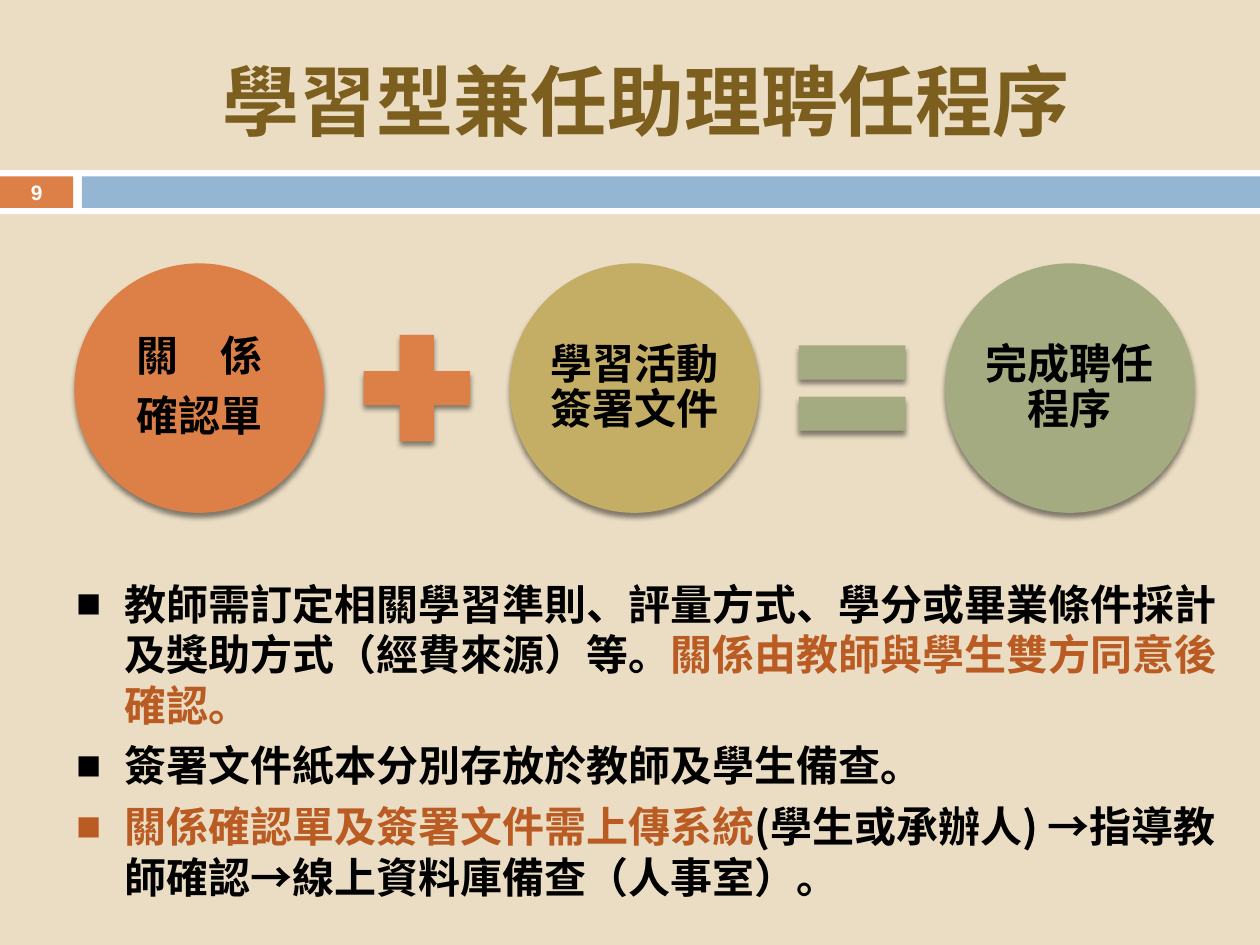
from dataclasses import dataclass

from lxml import etree
from pptx import Presentation
from pptx.dml.color import RGBColor
from pptx.enum import shapes, text
from pptx.oxml import ns
from pptx.util import Inches, Pt


@dataclass(frozen=True)
class Theme:
    background: str = "EBDDC3"
    white: str = "FFFFFF"
    black: str = "000000"
    orange: str = "DD8047"
    blue: str = "94B6D2"
    gold: str = "C4AD64"
    green: str = "A5AB81"
    title: str = "7C5F1E"
    accent: str = "B95B22"
    title_size: float = 44
    body_size: float = 24
    number_size: float = 11.9
    cjk: str = "Noto Sans CJK SC"
    circle_font: str = "Cabin"
    number_font: str = "Arial"


THEME = Theme()
SHAPE = shapes.MSO_SHAPE


def add_xml(parent, tag, **attrs):
    el = etree.SubElement(parent, ns.qn(tag))
    for name, value in attrs.items():
        el.set(name, str(value))
    return el


def add_run(p, content, size=THEME.body_size, color=THEME.black, font=THEME.cjk):
    r = p.add_run()
    r.text = content
    r.font.size = Pt(size)
    r.font.bold = True
    r.font.name = font
    r.font.color.rgb = RGBColor.from_string(color)
    add_xml(r._r.get_or_add_rPr(), "a:ea", typeface=THEME.cjk)


def add_shape(s, kind, box, color, shadow=False):
    sp = s.shapes.add_shape(kind, *map(Inches, box))
    sp.fill.solid()
    sp.fill.fore_color.rgb = RGBColor.from_string(color)
    sp.line.fill.background()
    sp.shadow.inherit = False
    if shadow:
        effects = sp._element.spPr.find(ns.qn("a:effectLst"))
        outer = add_xml(effects, "a:outerShdw", blurRad=Pt(3), dist=Pt(2.4),
                        dir=5400000, rotWithShape=0)
        add_xml(add_xml(outer, "a:srgbClr", val=THEME.black), "a:alpha", val=45000)
    return sp


def add_centred(sp, lines, spacing=None, after=0, **style):
    tf = sp.text_frame
    tf.word_wrap = True
    tf.vertical_anchor = text.MSO_ANCHOR.MIDDLE
    for i, line in enumerate(lines):
        p = tf.add_paragraph() if i else tf.paragraphs[0]
        p.alignment = text.PP_ALIGN.CENTER
        p.line_spacing = spacing
        p.space_after = Pt(after)
        add_run(p, line, **style)


def add_header(s):
    add_shape(s, SHAPE.RECTANGLE, (0, 1.35, 10, 0.35), THEME.white)
    number = add_shape(s, SHAPE.RECTANGLE, (0, 1.4, 0.58, 0.25), THEME.orange)
    number.text_frame.margin_top = number.text_frame.margin_bottom = 0
    add_centred(number, ["9"], size=THEME.number_size, color=THEME.white,
                font=THEME.number_font)
    add_shape(s, SHAPE.RECTANGLE, (0.65, 1.4, 9.35, 0.25), THEME.blue)
    title = s.shapes.add_textbox(*map(Inches, (0.67, 0.25, 8.92, 1.08)))
    add_centred(title, ["學習型兼任助理聘任程序"], size=THEME.title_size,
                color=THEME.title)


def add_equation(s):
    left, top, diameter, pitch = 0.59, 2.09, 1.98, 3.455
    sign = 1.15
    circles = [
        (["關　係", "確認單"], THEME.orange),
        (["學習活動簽署文件"], THEME.gold),
        (["完成聘任程序"], THEME.green),
    ]
    signs = [(SHAPE.MATH_PLUS, THEME.orange), (SHAPE.MATH_EQUAL, THEME.green)]
    for i, (lines, color) in enumerate(circles):
        x = left + i * pitch
        sp = add_shape(s, SHAPE.OVAL, (x, top, diameter, diameter), color, shadow=True)
        tf = sp.text_frame
        tf.margin_left = tf.margin_right = Inches(0.03)
        tf.margin_top = tf.margin_bottom = Inches(0.03)
        add_centred(sp, lines, spacing=0.9, after=0.35 * THEME.body_size,
                    font=THEME.circle_font)
        if i < len(signs):
            kind, sign_color = signs[i]
            sign_x = x + (diameter + pitch - sign) / 2
            sign_y = top + (diameter - sign) / 2
            add_shape(s, kind, (sign_x, sign_y, sign, sign), sign_color, shadow=True)


def add_bullets(s):
    items = [
        [("教師需訂定相關學習準則、評量方式、學分或畢業條件採計及獎助方式（經費來源）等。", THEME.black),
         ("關係由教師與學生雙方同意後確認。", THEME.accent)],
        [("簽署文件紙本分別存放於教師及學生備查。", THEME.black)],
        [("關係確認單及簽署文件需上傳系統", THEME.accent),
         ("(學生或承辦人) →指導教師確認→線上資料庫備查（人事室）。", THEME.black)],
    ]
    tf = s.shapes.add_textbox(*map(Inches, (0.51, 4.54, 9.37, 3.5))).text_frame
    tf.word_wrap = True
    for i, runs in enumerate(items):
        p = tf.add_paragraph() if i else tf.paragraphs[0]
        p.space_before = Pt(6 if i else 0)
        pPr = p._p.get_or_add_pPr()
        pPr.set("marL", str(Inches(0.38)))
        pPr.set("indent", str(Inches(-0.38)))
        add_xml(pPr, "a:buSzPct", val=60000)
        add_xml(pPr, "a:buFont", typeface=THEME.cjk)
        add_xml(pPr, "a:buChar", char="■")
        for content, color in runs:
            add_run(p, content, color=color)


def main():
    prs = Presentation()
    prs.slide_width, prs.slide_height = Inches(10), Inches(7.5)
    s = prs.slides.add_slide(prs.slide_layouts[6])
    s.background.fill.solid()
    s.background.fill.fore_color.rgb = RGBColor.from_string(THEME.background)
    add_header(s)
    add_equation(s)
    add_bullets(s)
    prs.save("out.pptx")


if __name__ == "__main__":
    main()
